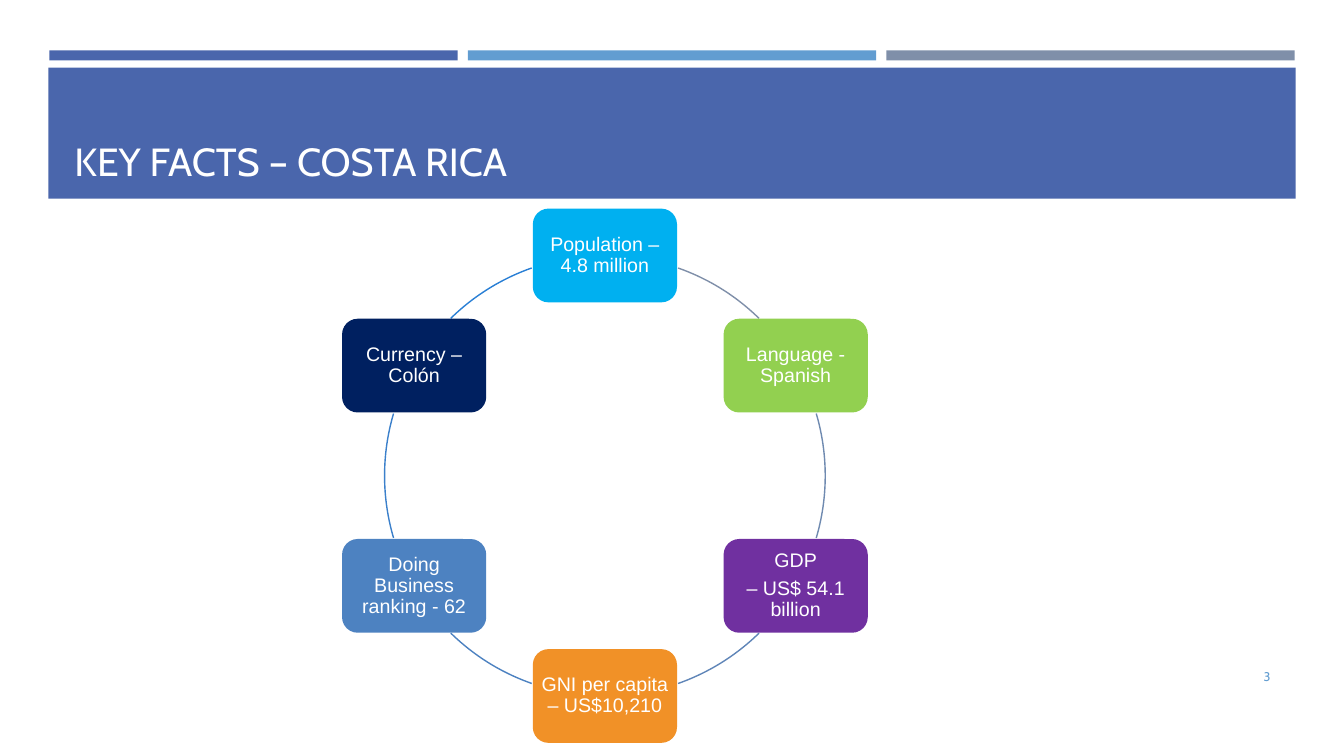
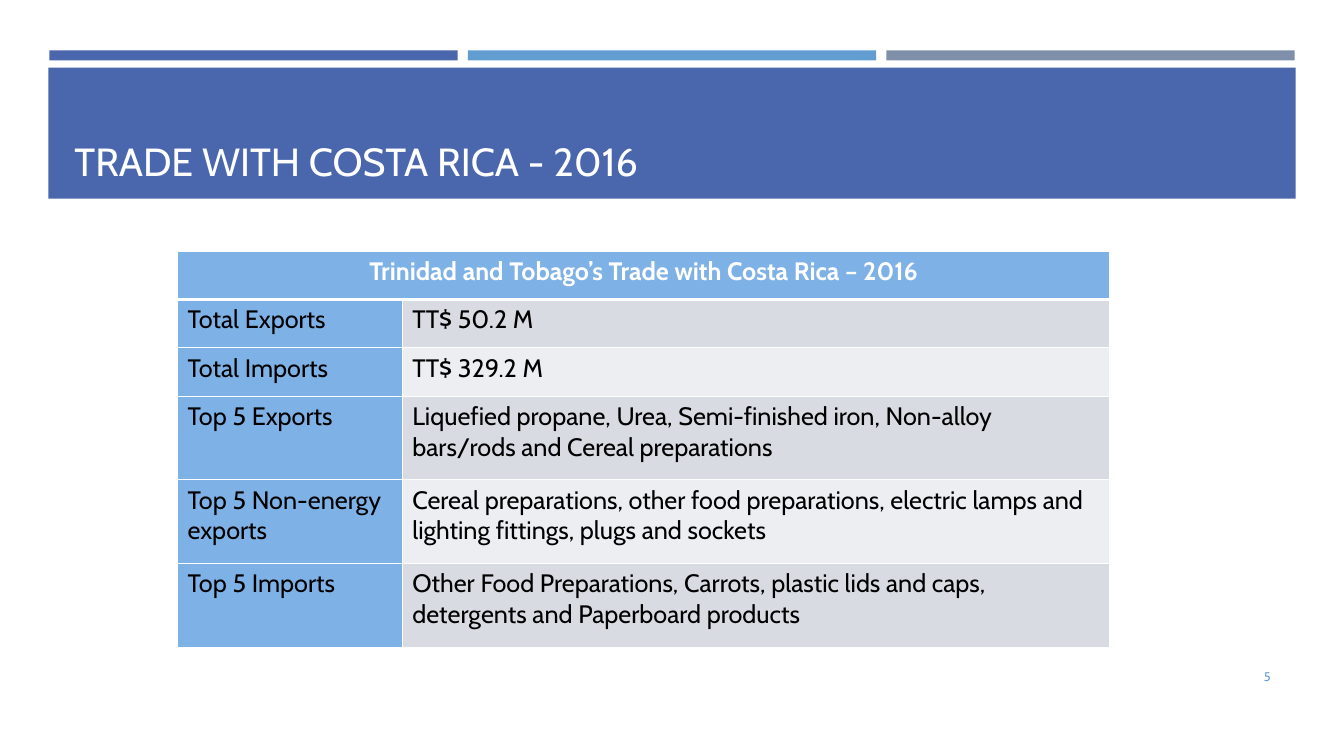
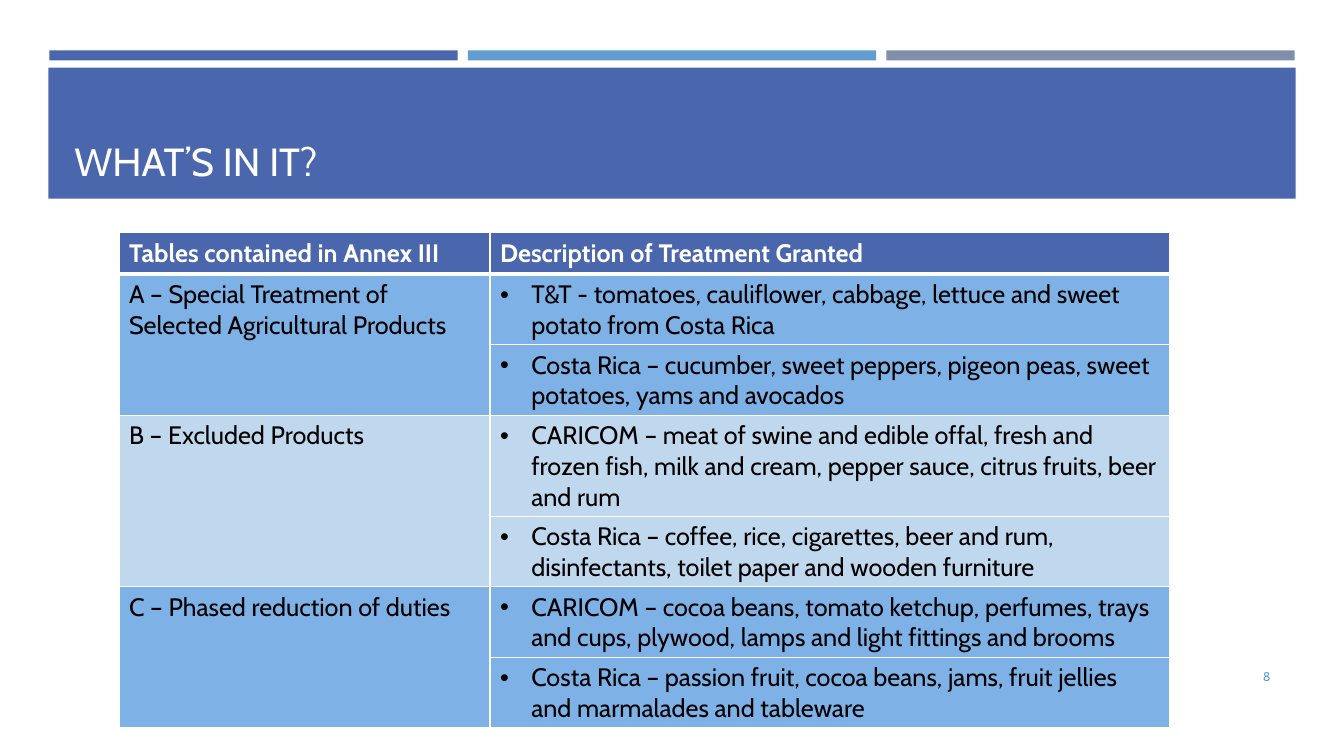
import math
from pptx import Presentation
from pptx.dml.color import RGBColor
from pptx.enum import shapes, text
from pptx.oxml import parse_xml
from pptx.oxml.ns import nsdecls
from pptx.util import Inches, Pt

BLUE = RGBColor(0x4A, 0x66, 0xAC)
SKY = RGBColor(0x62, 0x9D, 0xD1)
SLATE = RGBColor(0x7F, 0x8F, 0xA9)
LIGHT_BLUE = RGBColor(0x7E, 0xB2, 0xE6)
PALE_BLUE = RGBColor(0xC0, 0xD8, 0xED)
GREY = RGBColor(0xD8, 0xDB, 0xE2)
PALE_GREY = RGBColor(0xEC, 0xEE, 0xF1)
WHITE = RGBColor(0xFF, 0xFF, 0xFF)
BLACK = RGBColor(0x00, 0x00, 0x00)
FONT = "Cabin"
SHAPE, ALIGN, ANCHOR = shapes.MSO_SHAPE, text.PP_ALIGN, text.MSO_ANCHOR

# Key facts, counterclockwise from the top: text, fill
FACTS = [
    ("Population – 4.8 million", RGBColor(0x00, 0xB0, 0xF0)),
    ("Currency – Colón", RGBColor(0x00, 0x20, 0x60)),
    ("Doing Business ranking - 62", RGBColor(0x4D, 0x82, 0xC1)),
    ("GNI per capita – US$10,210", RGBColor(0xF1, 0x91, 0x27)),
    ("GDP\n– US$ 54.1 billion", RGBColor(0x70, 0x30, 0xA0)),
    ("Language - Spanish", RGBColor(0x92, 0xD0, 0x50)),
]
# Ring arcs between the facts: start and end in degrees clockwise from east
ARCS = [
    (225.6, 250.6, RGBColor(0x29, 0x7F, 0xD5)),
    (163.6, 196.4, RGBColor(0x3B, 0x80, 0xCB)),
    (109.4, 134.4, RGBColor(0x4D, 0x82, 0xC1)),
    (45.6, 70.6, RGBColor(0x5F, 0x85, 0xB8)),
    (343.6, 16.4, RGBColor(0x6F, 0x8A, 0xB0)),
    (289.4, 314.4, SLATE),
]

# Table rows: row height, then cells; None continues the cell beside (header) or above
TRADE = [
    (0.48, "Trinidad and Tobago’s Trade with Costa Rica – 2016", None),
    (0.48, "Total Exports", "TT$ 50.2 M"),
    (0.48, "Total Imports", "TT$ 329.2 M"),
    (0.83, "Top 5 Exports", "Liquefied propane, Urea, Semi-finished iron, Non-alloy "
     "bars/rods and Cereal preparations"),
    (0.83, "Top 5 Non-energy exports", "Cereal preparations, other food preparations, "
     "electric lamps and lighting fittings, plugs and sockets"),
    (0.83, "Top 5 Imports", "Other Food Preparations, Carrots, plastic lids and caps, "
     "detergents and Paperboard products"),
]
TRADE_FILLS = [(LIGHT_BLUE, LIGHT_BLUE)] + [(LIGHT_BLUE, GREY), (LIGHT_BLUE, PALE_GREY)] * 2 + [
    (LIGHT_BLUE, GREY)]
ANNEX = [
    (0.41, "Tables contained in Annex III", "Description of Treatment Granted"),
    (0.7, "A – Special Treatment of Selected Agricultural Products",
     "T&T - tomatoes, cauliflower, cabbage, lettuce and sweet potato from Costa Rica"),
    (0.7, None, "Costa Rica – cucumber, sweet peppers, pigeon peas, sweet potatoes, "
     "yams and avocados"),
    (1.0, "B – Excluded Products", "CARICOM – meat of swine and edible offal, fresh and "
     "frozen fish, milk and cream, pepper sauce, citrus fruits, beer and rum"),
    (0.7, None, "Costa Rica – coffee, rice, cigarettes, beer and rum, disinfectants, "
     "toilet paper and wooden furniture"),
    (0.7, "C – Phased reduction of duties", "CARICOM – cocoa beans, tomato ketchup, "
     "perfumes, trays and cups, plywood, lamps and light fittings and brooms"),
    (0.7, None, "Costa Rica – passion fruit, cocoa beans, jams, fruit jellies and "
     "marmalades and tableware"),
]
ANNEX_FILLS = [(c, c) for c in (BLUE, LIGHT_BLUE, LIGHT_BLUE, PALE_BLUE, PALE_BLUE,
                                LIGHT_BLUE, LIGHT_BLUE)]


def add_shape(s, kind, x, y, w, h, fill=None):
    sp = s.shapes.add_shape(kind, Inches(x), Inches(y), Inches(w), Inches(h))
    sp.shadow.inherit = False
    if fill is None:
        sp.fill.background()
    else:
        sp.fill.solid()
        sp.fill.fore_color.rgb = fill
        sp.line.fill.background()
    return sp


def style(p, size, color, align=ALIGN.LEFT, font=FONT, bold=False):
    p.alignment = align
    for r in p.runs:
        f = r.font
        f.size, f.name, f.bold = Pt(size), font, bold
        f.color.rgb = color


def add_text(s, words, x, y, w, h, size, color, align, anchor):
    tf = s.shapes.add_textbox(Inches(x), Inches(y), Inches(w), Inches(h)).text_frame
    tf.word_wrap = True
    tf.vertical_anchor = anchor
    tf.text = words
    style(tf.paragraphs[0], size, color, align)


def add_slide(prs, title, number):
    s = prs.slides.add_slide(prs.slide_layouts[6])
    for i, color in enumerate((BLUE, SKY, SLATE)):
        add_shape(s, SHAPE.RECTANGLE, 0.49 + 4.15 * i, 0.5, 4.05, 0.1, color)
    add_shape(s, SHAPE.RECTANGLE, 0.48, 0.67, 12.37, 1.3, BLUE)
    add_text(s, title, 0.64, 0.77, 12.06, 1.11, 28, WHITE, ALIGN.LEFT, ANCHOR.BOTTOM)
    add_text(s, number, 11.55, 6.51, 1.15, 0.4, 9, SKY, ALIGN.RIGHT, ANCHOR.MIDDLE)
    return s


def add_ring(s, cx=6.0, cy=4.72, radius=2.185, w=1.43, h=0.93):
    for start, end, color in ARCS:
        arc = add_shape(s, SHAPE.ARC, cx - radius, cy - radius, 2 * radius, 2 * radius)
        # Adjustments are in 100000ths, angles in 60000ths of a degree
        arc.adjustments[0], arc.adjustments[1] = start * 0.6, end * 0.6
        arc.line.color.rgb = color
        arc.line.width = Pt(1)
    for i, (words, color) in enumerate(FACTS):
        turn = math.radians(360 / len(FACTS) * i)
        x, y = cx - radius * math.sin(turn), cy - radius * math.cos(turn)
        sp = add_shape(s, SHAPE.ROUNDED_RECTANGLE, x - w / 2, y - h / 2, w, h, color)
        tf = sp.text_frame
        tf.word_wrap = True
        tf.vertical_anchor = ANCHOR.MIDDLE
        tf.margin_left = tf.margin_right = tf.margin_top = tf.margin_bottom = Inches(0.01)
        tf.text = words
        for p in tf.paragraphs:
            p.line_spacing = 0.9
            p.space_after = Pt(5)
            style(p, 14, WHITE, ALIGN.CENTER, "Arial")


def set_borders(cell, row):
    tcPr = cell._tc.get_or_add_tcPr()
    heavy = {(0, "B"), (1, "T")}  # rule under the header
    for side in "LRTB":
        width = Pt(3 if (row, side) in heavy else 1)
        tcPr.append(parse_xml(
            f'<a:ln{side} {nsdecls("a")} w="{width}"><a:solidFill>'
            f'<a:srgbClr val="{WHITE}"/></a:solidFill></a:ln{side}>'))


def add_bullet(p):
    pPr = p._p.get_or_add_pPr()
    pPr.set("marL", str(Inches(0.31)))
    pPr.set("indent", str(Inches(-0.31)))
    pPr.append(parse_xml(f'<a:buFont {nsdecls("a")} typeface="Arial"/>'))
    pPr.append(parse_xml(f'<a:buChar {nsdecls("a")} char="•"/>'))


def add_table(s, x, y, widths, rows, fills, bullets=False):
    height = sum(row[0] for row in rows)
    tbl = s.shapes.add_table(len(rows), len(widths), Inches(x), Inches(y),
                             Inches(sum(widths)), Inches(height)).table
    tbl.horz_banding = False
    for col, width in zip(tbl.columns, widths):
        col.width = Inches(width)
    for i, (row_height, *cells) in enumerate(rows):
        tbl.rows[i].height = Inches(row_height)
        for j, words in enumerate(cells):
            cell = tbl.cell(i, j)
            set_borders(cell, i)
            cell.fill.solid()
            cell.fill.fore_color.rgb = fills[i][j]
            if words is None:
                start = tbl.cell(i, j - 1) if i == 0 else tbl.cell(i - 1, j)
                start.merge(cell)
                continue
            cell.text_frame.text = words
            p = cell.text_frame.paragraphs[0]
            if bullets and i and j:
                add_bullet(p)
            centred = i == 0 and None in cells
            style(p, 18, BLACK if i else WHITE,
                  ALIGN.CENTER if centred else ALIGN.LEFT, bold=i == 0)


def main():
    prs = Presentation()
    prs.slide_width, prs.slide_height = Inches(13.33), Inches(7.5)

    add_ring(add_slide(prs, "KEY FACTS – COSTA RICA", "3"))

    s = add_slide(prs, "TRADE WITH COSTA RICA - 2016", "5")
    add_table(s, 1.76, 2.49, (2.23, 7.02), TRADE, TRADE_FILLS)

    s = add_slide(prs, "WHAT’S IN IT?", "8")
    add_table(s, 1.18, 2.31, (3.68, 6.74), ANNEX, ANNEX_FILLS, bullets=True)

    prs.save("out.pptx")


if __name__ == "__main__":
    main()
